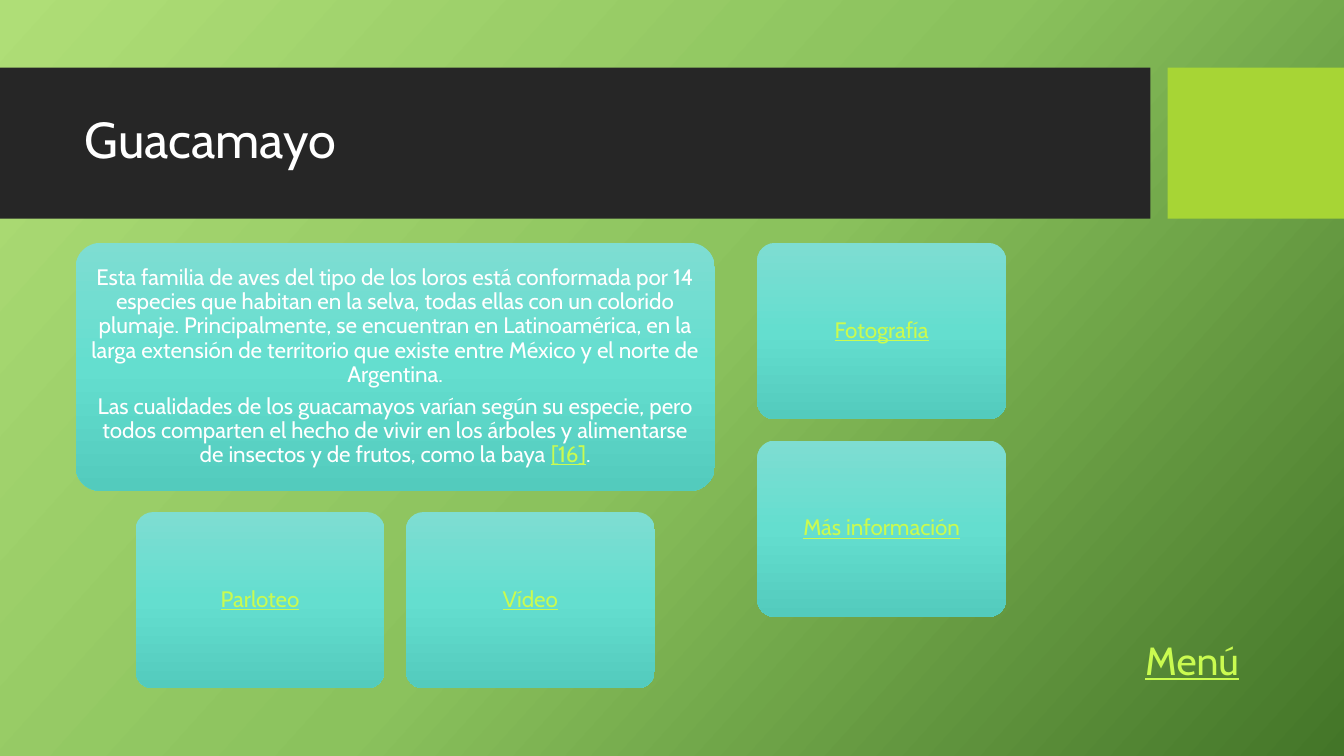
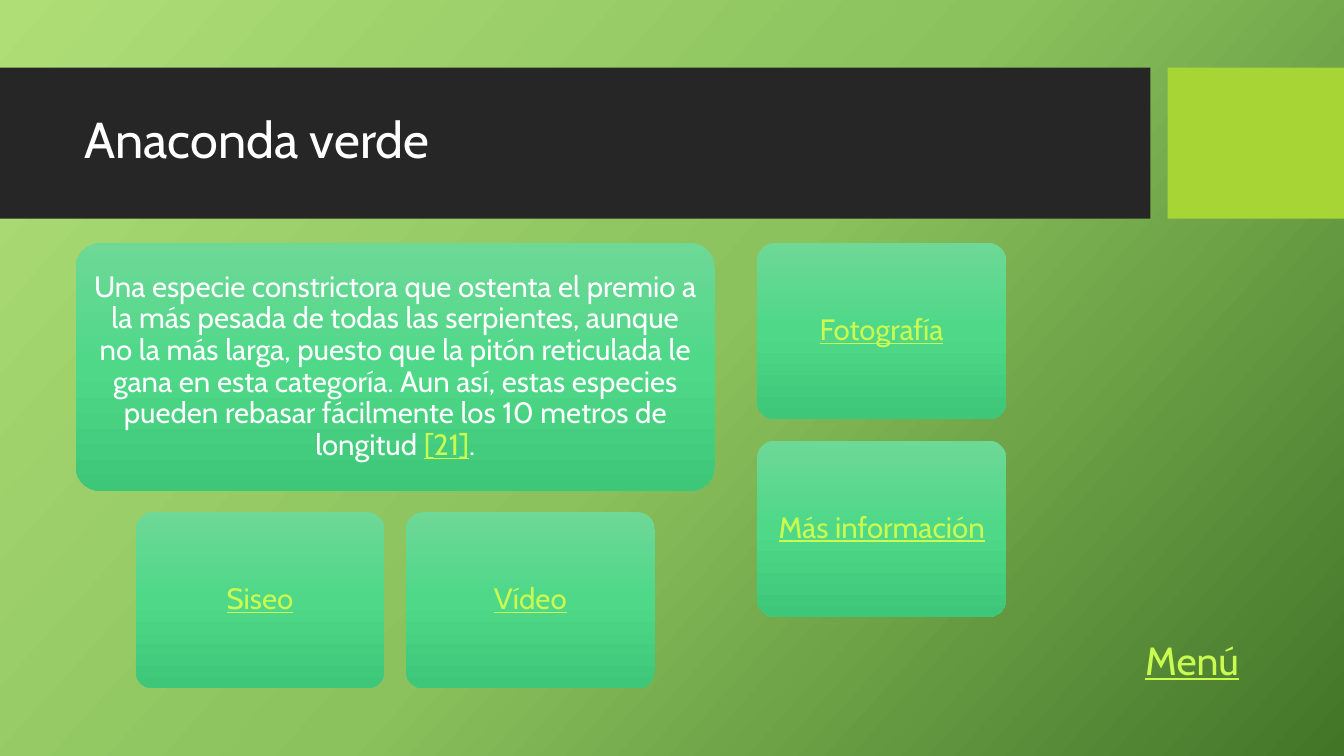
from dataclasses import dataclass
from typing import NamedTuple

from lxml import etree
from pptx import Presentation
from pptx.dml.color import RGBColor
from pptx.enum import shapes, text
from pptx.oxml.ns import qn
from pptx.util import Inches, Pt


@dataclass(frozen=True)
class Theme:
    """Colours, font and type sizes of the deck."""
    font: str = "Cabin"
    white: str = "FFFFFF"
    link: str = "CAFB50"
    band: str = "262626"
    accent: str = "A7D535"
    backdrop: tuple = ("AFDE77", "8BC25D", "437528")
    turquoise: tuple = ("7EDDD2", "64DECF", "53CBBD")
    emerald: tuple = ("6ED897", "4ED888", "3EC778")
    title_size: int = 36
    menu_size: int = 28
    card_size: int = 16
    large_card_size: int = 21


class Box(NamedTuple):
    """Rectangle in inches."""
    left: float
    top: float
    width: float
    height: float

    def emu(self):
        """Return the rectangle as lengths."""
        return [Inches(side) for side in self]


class Link(str):
    """Words shown in the link style."""


THEME = Theme()
BAND = Box(0, 0.67, 11.41, 1.5)
ACCENT = Box(11.58, 0.67, 1.75, 1.5)
TITLE = Box(0.74, 0.82, 10.51, 1.18)
CARDS = Box(0.75, 2.41, 9.23, 4.42)
MENU = Box(11.26, 6.26, 1.21, 0.57)
CARD_WIDTH, CARD_HEIGHT, CARD_GAP = 2.47, 1.75, 0.21


def fill_gradient(fill, element, colors, angle):
    """Apply evenly spaced colour stops at a clockwise angle."""
    fill.gradient()
    fill.gradient_angle = 360 - angle
    stops = next(element.iter(qn("a:gsLst")))
    for stop in list(stops):
        stops.remove(stop)
    for index, color in enumerate(colors):
        position = str(round(100000 * index / (len(colors) - 1)))
        stop = etree.SubElement(stops, qn("a:gs"), pos=position)
        etree.SubElement(stop, qn("a:srgbClr"), val=color)


def write_text(shape, paragraphs, *, size, align=text.PP_ALIGN.LEFT, inset=None,
               anchor=text.MSO_ANCHOR.TOP, line_spacing=None, space_after=0):
    """Write paragraphs, each a list of plain and link runs, into a shape."""
    frame = shape.text_frame
    frame.word_wrap = True
    frame.vertical_anchor = anchor
    if inset is not None:
        frame.margin_left = frame.margin_right = Inches(inset)
        frame.margin_top = frame.margin_bottom = Inches(inset)
    for index, pieces in enumerate(paragraphs):
        paragraph = frame.add_paragraph() if index else frame.paragraphs[0]
        paragraph.alignment = align
        paragraph.line_spacing = line_spacing
        paragraph.space_after = Pt(space_after)
        for piece in pieces:
            is_link = isinstance(piece, Link)
            run = paragraph.add_run()
            run.text = piece
            run.font.name = THEME.font
            run.font.size = Pt(size)
            run.font.underline = is_link
            run.font.color.rgb = RGBColor.from_string(THEME.link if is_link else THEME.white)


def add_block(slide, box, preset=shapes.MSO_SHAPE.RECTANGLE, color=None):
    """Add a borderless shape without shadow, with an optional solid fill."""
    block = slide.shapes.add_shape(preset, *box.emu())
    block.shadow.inherit = False
    block.line.fill.background()
    if color:
        block.fill.solid()
        block.fill.fore_color.rgb = RGBColor.from_string(color)
    return block


def add_frame(slide, title):
    """Draw the backdrop, title band and menu link shared by every slide."""
    fill_gradient(slide.background.fill, slide.element, THEME.backdrop, 42)
    add_block(slide, BAND, color=THEME.band)
    add_block(slide, ACCENT, color=THEME.accent)
    heading = slide.shapes.add_textbox(*TITLE.emu())
    write_text(heading, [[title]], size=THEME.title_size,
               anchor=text.MSO_ANCHOR.MIDDLE, line_spacing=0.9)
    menu = slide.shapes.add_textbox(*MENU.emu())
    write_text(menu, [[Link("Menú")]], size=THEME.menu_size)


def add_card(slide, box, paragraphs, colors, size, inset):
    """Draw one rounded gradient card with centred text."""
    card = add_block(slide, box, shapes.MSO_SHAPE.ROUNDED_RECTANGLE)
    card.adjustments[0] = 0.1
    fill_gradient(card.fill, card.element, colors, 90)
    write_text(card, paragraphs, size=size, align=text.PP_ALIGN.CENTER, inset=inset,
               anchor=text.MSO_ANCHOR.MIDDLE, line_spacing=0.9, space_after=0.35 * size)


def add_cards(slide, box, description, sound, **style):
    """Lay out the description, two cards below it and two at its right."""
    column_left = box.left + box.width - CARD_WIDTH
    row_top = box.top + box.height - CARD_HEIGHT
    summary = Box(box.left, box.top, box.width - CARD_WIDTH - 2 * CARD_GAP,
                  box.height - CARD_HEIGHT - CARD_GAP)
    row_left = summary.left + (summary.width - 2 * CARD_WIDTH - CARD_GAP) / 2
    add_card(slide, summary, description, **style)
    for index, label in enumerate((sound, "Vídeo")):
        spot = Box(row_left + index * (CARD_WIDTH + CARD_GAP), row_top, CARD_WIDTH, CARD_HEIGHT)
        add_card(slide, spot, [[Link(label)]], **style)
    for index, label in enumerate(("Fotografía", "Más información")):
        spot = Box(column_left, box.top + index * (CARD_HEIGHT + CARD_GAP), CARD_WIDTH, CARD_HEIGHT)
        add_card(slide, spot, [[Link(label)]], **style)


def add_animal_slide(deck, title, description, sound, **style):
    """Build the slide of one animal."""
    slide = deck.slides.add_slide(deck.slide_layouts[6])
    add_frame(slide, title)
    add_cards(slide, CARDS, description, sound, **style)


def main():
    """Build and save the deck."""
    deck = Presentation()
    deck.slide_width, deck.slide_height = Inches(13.33), Inches(7.5)
    add_animal_slide(
        deck, "Guacamayo",
        [["Esta familia de aves del tipo de los loros está conformada por 14 especies que "
          "habitan en la selva, todas ellas con un colorido plumaje. Principalmente, se "
          "encuentran en Latinoamérica, en la larga extensión de territorio que existe "
          "entre México y el norte de Argentina."],
         ["Las cualidades de los guacamayos varían según su especie, pero todos comparten "
          "el hecho de vivir en los árboles y alimentarse de insectos y de frutos, como la "
          "baya ", Link("[16]"), "."]],
        "Parloteo", colors=THEME.turquoise, size=THEME.card_size, inset=0.07)
    add_animal_slide(
        deck, "Anaconda verde",
        [["Una especie constrictora que ostenta el premio a la más pesada de todas las "
          "serpientes, aunque no la más larga, puesto que la pitón reticulada le gana en "
          "esta categoría. Aun así, estas especies pueden rebasar fácilmente los 10 metros "
          "de longitud ", Link("[21]"), "."]],
        "Siseo", colors=THEME.emerald, size=THEME.large_card_size, inset=0.09)
    deck.save("out.pptx")


if __name__ == "__main__":
    main()
